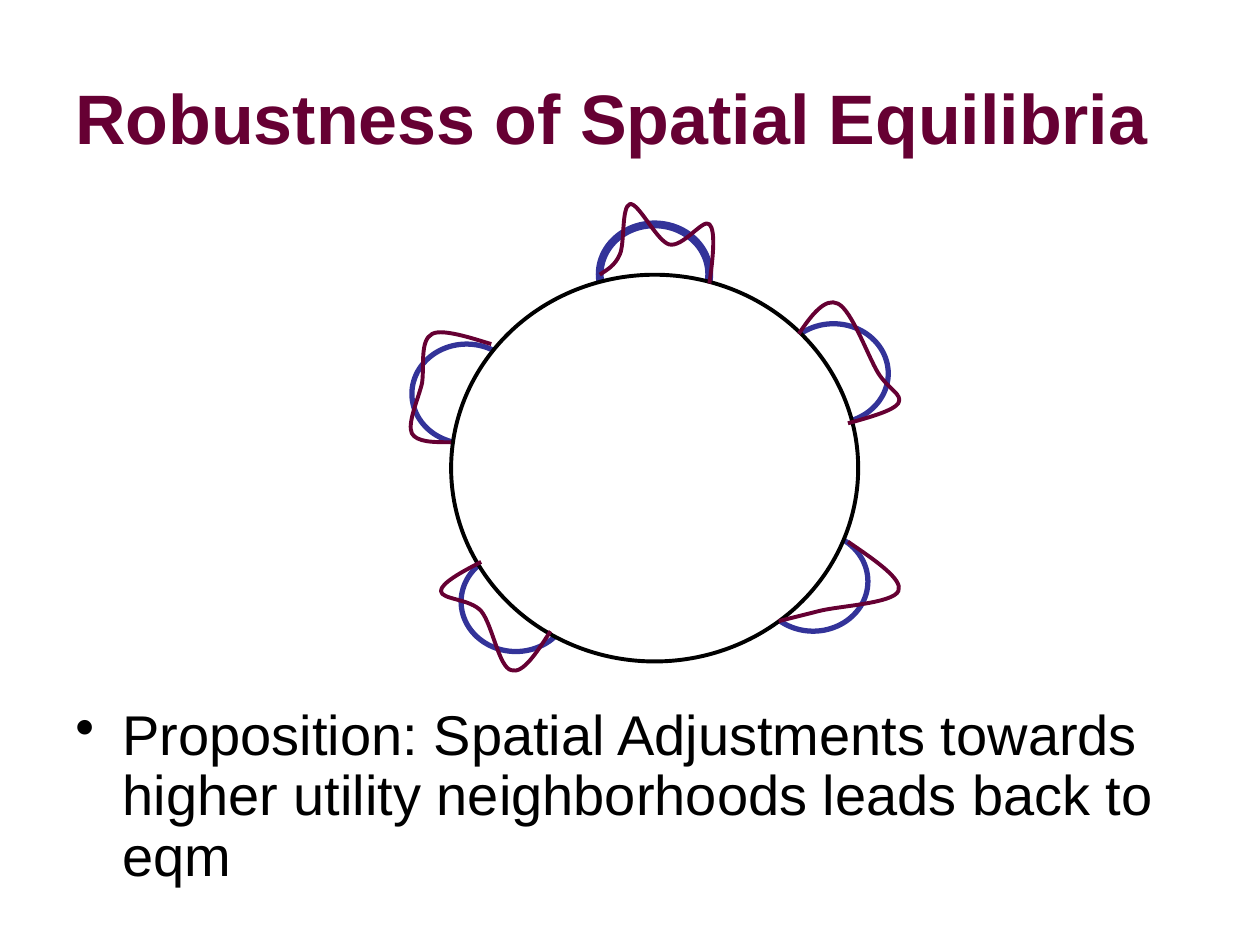
from lxml import etree
from pptx import Presentation
from pptx import util as u
from pptx.dml.color import RGBColor
from pptx.enum import shapes, text
from pptx.oxml.ns import qn

COLORS = {"wine": "660033", "blue": "333399", "black": "000000", "white": "FFFFFF"}


class SlideKit:
    """Holds the style and the current slide; all lengths are in points."""

    font_name = "Arial"

    def __init__(self, deck):
        self.slide = deck.slides.add_slide(deck.slide_layouts[6])

    def color(self, name):
        return RGBColor.from_string(COLORS[name])

    def outline(self, shape, color, width, fill=None):
        shape.shadow.inherit = False
        if fill:
            shape.fill.solid()
            shape.fill.fore_color.rgb = self.color(fill)
        else:
            shape.fill.background()
        shape.line.color.rgb = self.color(color)
        shape.line.width = u.Pt(width)

    def ellipse(self, left, top, width, height, color, weight, fill=None):
        oval = self.slide.shapes.add_shape(
            shapes.MSO_SHAPE.OVAL, *map(u.Pt, (left, top, width, height)))
        self.outline(oval, color, weight, fill)

    def curve(self, points, color, weight):
        """Start point, then three points for each cubic segment."""
        start, *rest = [(u.Pt(x), u.Pt(y)) for x, y in points]
        builder = self.slide.shapes.build_freeform(*start)
        builder.add_line_segments(rest, close=False)
        wave = builder.convert_to_shape()
        self.outline(wave, color, weight)
        # Join each three line steps into one cubic Bézier step
        steps = list(wave._element.iter(qn("a:lnTo")))
        for i in range(0, len(steps), 3):
            bezier = etree.Element(qn("a:cubicBezTo"))
            steps[i].addprevious(bezier)
            for step in steps[i:i + 3]:
                bezier.append(step[0])
                step.getparent().remove(step)

    def textbox(self, left, top, width, height, words, size, color, bold=False,
                anchor=text.MSO_ANCHOR.TOP):
        box = self.slide.shapes.add_textbox(*map(u.Pt, (left, top, width, height)))
        frame = box.text_frame
        frame.word_wrap = True
        frame.vertical_anchor = anchor
        paragraph = frame.paragraphs[0]
        paragraph.text = words
        font = paragraph.font
        font.name, font.size, font.bold = self.font_name, u.Pt(size), bold
        font.color.rgb = self.color(color)
        return paragraph

    def bullet(self, paragraph, indent):
        props = paragraph._p.get_or_add_pPr()
        props.set("marL", str(u.Pt(indent)))
        props.set("indent", str(-u.Pt(indent)))
        mark = etree.Element(qn("a:buChar"), char="•")
        props.find(qn("a:defRPr")).addprevious(mark)


# Neighborhoods around the circle: left, top, line width
NEIGHBORHOODS = [
    (342.7, 128.2, 4.5),
    (445, 185, 3),
    (433.4, 303.8, 3),
    (263.5, 315.4, 3),
    (235.4, 196.6, 3),
]

# Adjusted distributions, one for each neighborhood
ADJUSTMENTS = [
    # left
    [(257.8, 252.7),
     (247.7, 252.7), (238.3, 252.7), (235.4, 247.7),
     (232.6, 241.9), (239, 228.2), (241.2, 218.9),
     (242.6, 209.5), (239.8, 194.4), (247, 190.8),
     (253.4, 187.2), (275, 195.1), (280.8, 196.6)],
    # top
    [(342.7, 157),
     (347, 154.1), (351.4, 151.9), (354.2, 145.4),
     (357.1, 139), (355, 118.1), (360, 116.6),
     (365, 115.9), (375.1, 137.5), (382.3, 139.7),
     (390.2, 141.8), (401.8, 124.6), (405.4, 128.2),
     (409, 131.8), (407.5, 146.9), (405.4, 162)],
    # upper right
    [(456.5, 190.8),
     (463.7, 180), (471.6, 169.9), (478.8, 173.5),
     (486.7, 177.1), (496.1, 203.8), (501.8, 213.1),
     (507.6, 222.5), (516.2, 225.4), (513.4, 230.4),
     (510.5, 234.7), (497.5, 238.3), (484.6, 241.9)],
    # lower right
    [(484.6, 309.6),
     (500.4, 320.4), (516.2, 331.2), (513.4, 337.7),
     (510.5, 344.9), (478.8, 346.3), (468, 349.2),
     (456.5, 352.1), (450.7, 353.5), (445, 355)],
    # lower left
    [(314.6, 360.7),
     (306.7, 373), (298.8, 385.2), (292.3, 383),
     (285.1, 381.6), (281.5, 357.1), (275, 349.2),
     (268.6, 342), (252, 342.7), (252, 337.7),
     (252, 333.4), (263.5, 326.9), (275, 321.1)],
]


def main():
    deck = Presentation()
    deck.slide_width, deck.slide_height = u.Pt(720), u.Pt(540)
    kit = SlideKit(deck)

    # Title
    kit.textbox(36, 21.6, 648, 90, "Robustness of Spatial Equilibria", 40, "wine",
                bold=True, anchor=text.MSO_ANCHOR.MIDDLE)

    # Neighborhoods, partly covered by the circle
    for left, top, weight in NEIGHBORHOODS:
        kit.ellipse(left, top, 62.6, 56.9, "blue", weight)
    kit.ellipse(257.8, 157, 232.6, 221, "black", 2.25, fill="white")

    # Adjusted distributions
    for points in ADJUSTMENTS:
        kit.curve(points, "wine", 2.25)

    # Proposition
    proposition = kit.textbox(
        36, 400.3, 648, 82,
        "Proposition: Spatial Adjustments towards higher utility neighborhoods "
        "leads back to eqm", 32, "black")
    proposition.line_spacing = 0.9
    proposition.space_before = u.Pt(6.4)
    kit.bullet(proposition, 27)

    deck.save("out.pptx")


if __name__ == "__main__":
    main()
